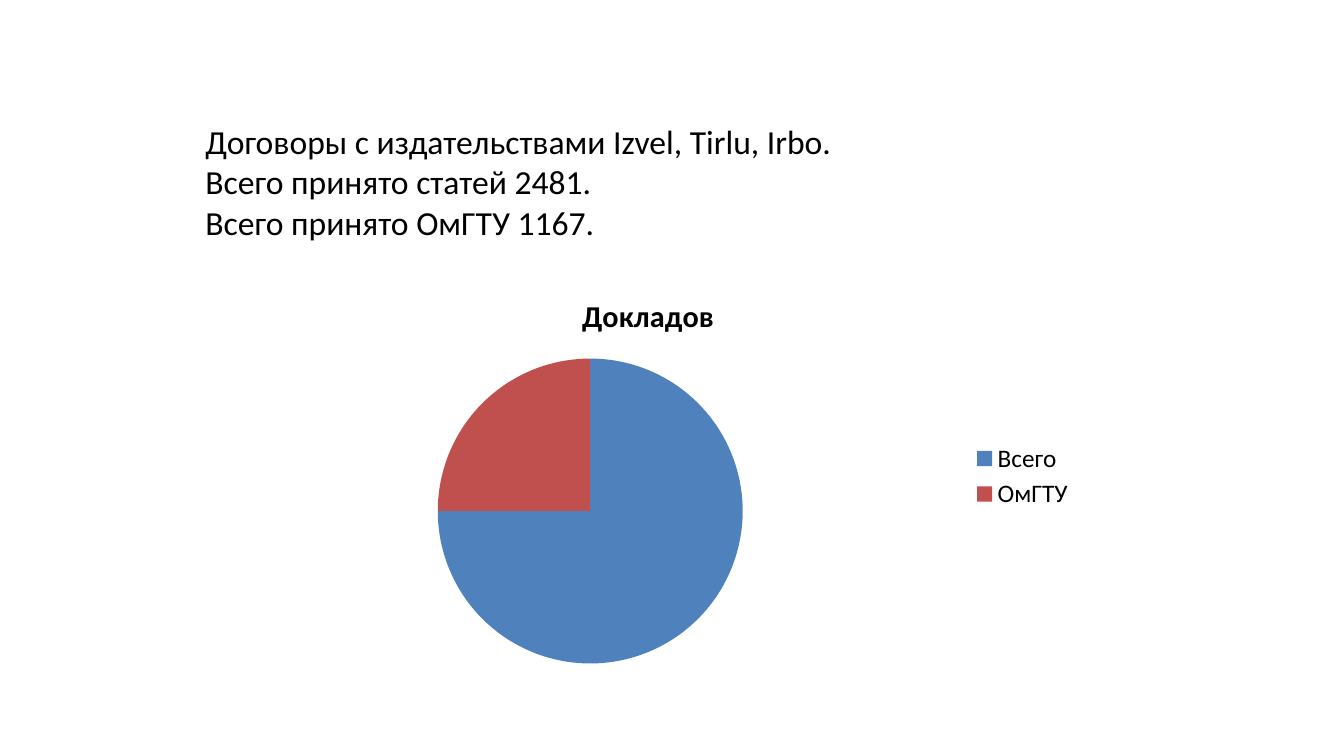
"""Build a slide on accepted papers with a pie chart of reports."""
from pptx import Presentation
from pptx.chart.data import CategoryChartData
from pptx.dml.color import RGBColor
from pptx.enum.chart import XL_CHART_TYPE as ChartType, XL_LEGEND_POSITION as LegendPosition
from pptx.util import Pt

BLACK = RGBColor(0x00, 0x00, 0x00)
BLUE = RGBColor(0x4F, 0x81, 0xBD)
RED = RGBColor(0xC0, 0x50, 0x4D)

SUMMARY = (
    "Договоры с издательствами Izvel, Tirlu, Irbo.",
    "Всего принято статей 2481.",
    "Всего принято ОмГТУ 1167.",
)
REPORTS = (("Всего", 75, BLUE), ("ОмГТУ", 25, RED))


class SlideBuilder:
    def __init__(self, slide, font_name="Calibri", color=BLACK):
        self.slide = slide
        self.font_name = font_name
        self.color = color

    def style(self, font, size, bold=False):
        font.name = self.font_name
        font.size = Pt(size)
        font.bold = bold
        font.color.rgb = self.color

    def text(self, box, lines, size):
        frame = self.slide.shapes.add_textbox(*map(Pt, box)).text_frame
        frame.word_wrap = True
        frame.text = "\n".join(lines)
        for paragraph in frame.paragraphs:
            self.style(paragraph.font, size)

    def pie(self, box, title, slices, size, title_size):
        data = CategoryChartData()
        data.categories = [name for name, value, color in slices]
        data.add_series(title, [value for name, value, color in slices])
        chart = self.slide.shapes.add_chart(ChartType.PIE, *map(Pt, box), data).chart
        self.style(chart.font, size)
        chart.has_title = True
        chart.chart_title.text_frame.text = title
        self.style(chart.chart_title.text_frame.paragraphs[0].font, title_size, bold=True)
        chart.has_legend = True
        chart.legend.position = LegendPosition.RIGHT
        chart.legend.include_in_layout = False
        plot = chart.plots[0]
        plot.vary_by_categories = True
        for index, (name, value, color) in enumerate(slices):
            fill = plot.series[0].points[index].format.fill
            fill.solid()
            fill.fore_color.rgb = color


def main():
    presentation = Presentation()
    presentation.slide_width, presentation.slide_height = Pt(960), Pt(540)
    builder = SlideBuilder(presentation.slides.add_slide(presentation.slide_layouts[6]))
    builder.text((139.7, 82.8, 708.5, 94.3), SUMMARY, 24)
    builder.pie((151.2, 196.6, 623.5, 287.3), "Докладов", REPORTS, 18, 21.6)
    presentation.save("out.pptx")


if __name__ == "__main__":
    main()
